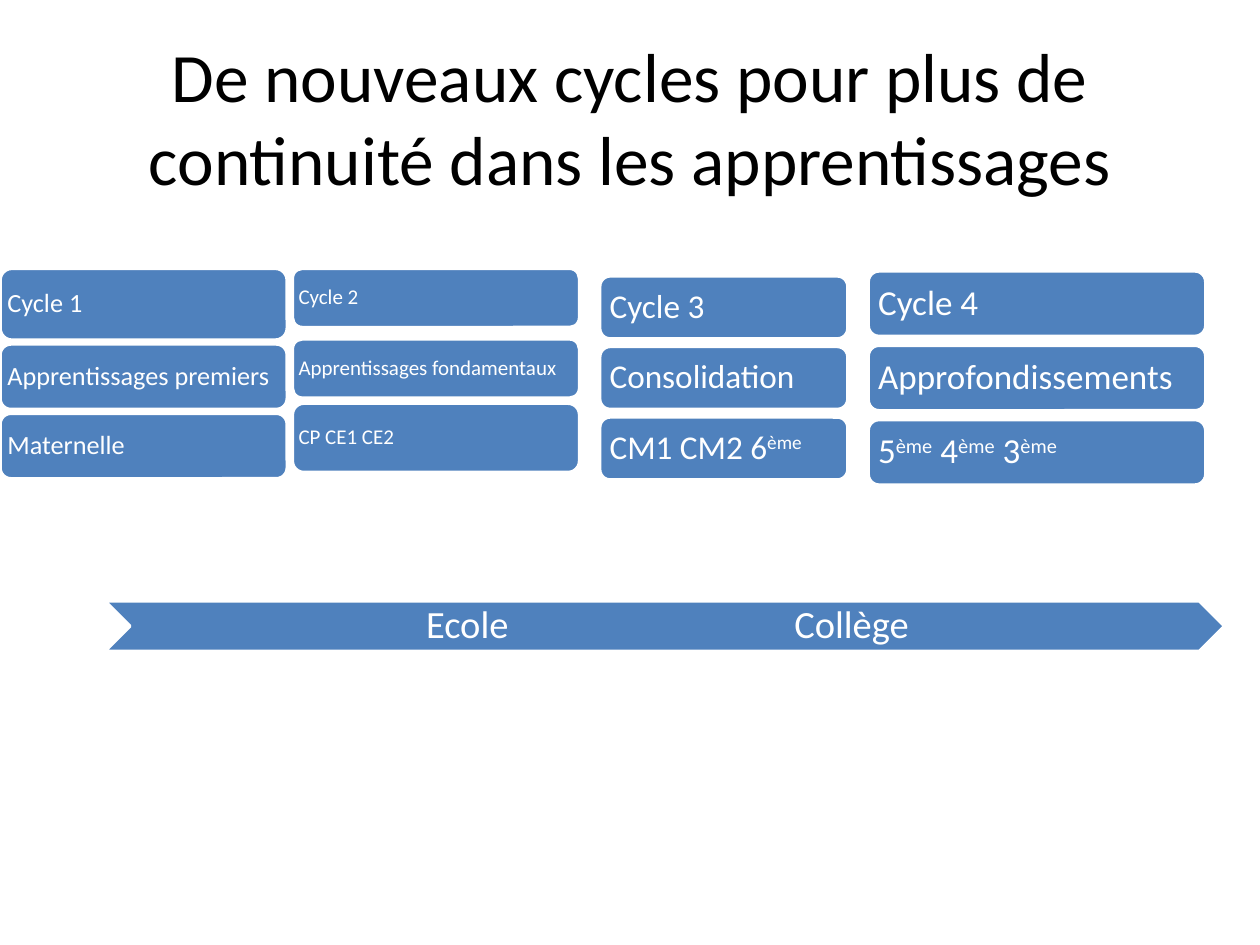
from lxml.etree import SubElement
from pptx import Presentation
from pptx.dml.color import RGBColor
from pptx.enum.shapes import MSO_SHAPE as Shape
from pptx.enum.text import MSO_ANCHOR as Anchor, PP_ALIGN as Align
from pptx.oxml.ns import qn
from pptx.util import Inches, Pt

FONT, BLUE, WHITE, BLACK = "Calibri", "4F81BD", "FFFFFF", "000000"
TITLE = "De nouveaux cycles pour plus de continuité dans les apprentissages"
CYCLES = [
    dict(left=0, width=2.28, size=15, inset=0.06, tops=(2.13, 2.73, 3.28),
         heights=(0.57, 0.52, 0.52),
         labels=("Cycle 1", "Apprentissages premiers", "Maternelle")),
    dict(left=2.32, width=2.28, size=12, inset=0.05, tops=(2.13, 2.69, 3.2),
         heights=(0.47, 0.47, 0.55),
         labels=("Cycle 2", "Apprentissages fondamentaux", "CP CE1 CE2")),
    dict(left=4.76, width=1.97, size=19, inset=0.08, tops=(2.19, 2.75, 3.31),
         heights=(0.5,) * 3,
         labels=("Cycle 3", "Consolidation", "CM1 CM2 6^ème")),
    dict(left=6.89, width=2.68, size=20, inset=0.08, tops=(2.15, 2.74, 3.33),
         heights=(0.52,) * 3,
         labels=("Cycle 4", "Approfondissements", "5^ème^ 4^ème^ 3^ème")),
]
SCHOOLS = [("Ecole", 2.58), ("Collège", 5.63)]
CORNER_INSET = 0.05


def color(value):
    return RGBColor.from_string(value)


def write(frame, text, size, ink=WHITE, align=Align.LEFT, spacing=0.9, insets=None):
    frame.word_wrap = True
    frame.vertical_anchor = Anchor.MIDDLE
    if insets:
        frame.margin_left, frame.margin_top, frame.margin_right, frame.margin_bottom = (
            Inches(inset) for inset in insets)
    paragraph = frame.paragraphs[0]
    paragraph.alignment = align
    paragraph.line_spacing = spacing
    for index, part in enumerate(text.split("^")):
        run = paragraph.add_run()
        run.text = part
        run.font.name, run.font.size = FONT, Pt(size)
        run.font.color.rgb = color(ink)
        if index % 2:
            run.font._element.set("baseline", "30000")
    return paragraph


def add_block(slide, preset, left, top, width, height):
    block = slide.shapes.add_shape(preset, *map(Inches, (left, top, width, height)))
    block.shadow.inherit = False
    block.fill.solid()
    block.fill.fore_color.rgb = color(BLUE)
    block.line.color.rgb = color(WHITE)
    block.line.width = Pt(2)
    return block


def add_cycle(slide, cycle):
    for top, height, label in zip(cycle["tops"], cycle["heights"], cycle["labels"]):
        block = add_block(slide, Shape.ROUNDED_RECTANGLE,
                          cycle["left"], top, cycle["width"], height)
        inset = cycle["inset"] - CORNER_INSET * height
        write(block.text_frame, label, cycle["size"], insets=(inset,) * 4)


def add_schools(slide):
    arrow = add_block(slide, Shape.CHEVRON, 0.83, 4.77, 8.89, 0.4)
    text = "".join("\t" + school for school, center in SCHOOLS)
    paragraph = write(arrow.text_frame, text, 22, insets=(0.1, 0.03, 0.03, 0.03))
    stops = SubElement(paragraph._p.get_or_add_pPr(), qn("a:tabLst"))
    for school, center in SCHOOLS:
        SubElement(stops, qn("a:tab"), pos=str(Inches(center)), algn="ctr")


def main():
    deck = Presentation()
    deck.slide_width, deck.slide_height = Inches(10), Inches(7.5)
    slide = deck.slides.add_slide(deck.slide_layouts[5])
    title = slide.shapes.title
    title.left, title.top, title.width, title.height = map(Inches, (0.5, 0.3, 9, 1.25))
    write(title.text_frame, TITLE, 39.6, ink=BLACK, align=Align.CENTER, spacing=1.0)
    for cycle in CYCLES:
        add_cycle(slide, cycle)
    add_schools(slide)
    deck.save("out.pptx")


if __name__ == "__main__":
    main()
